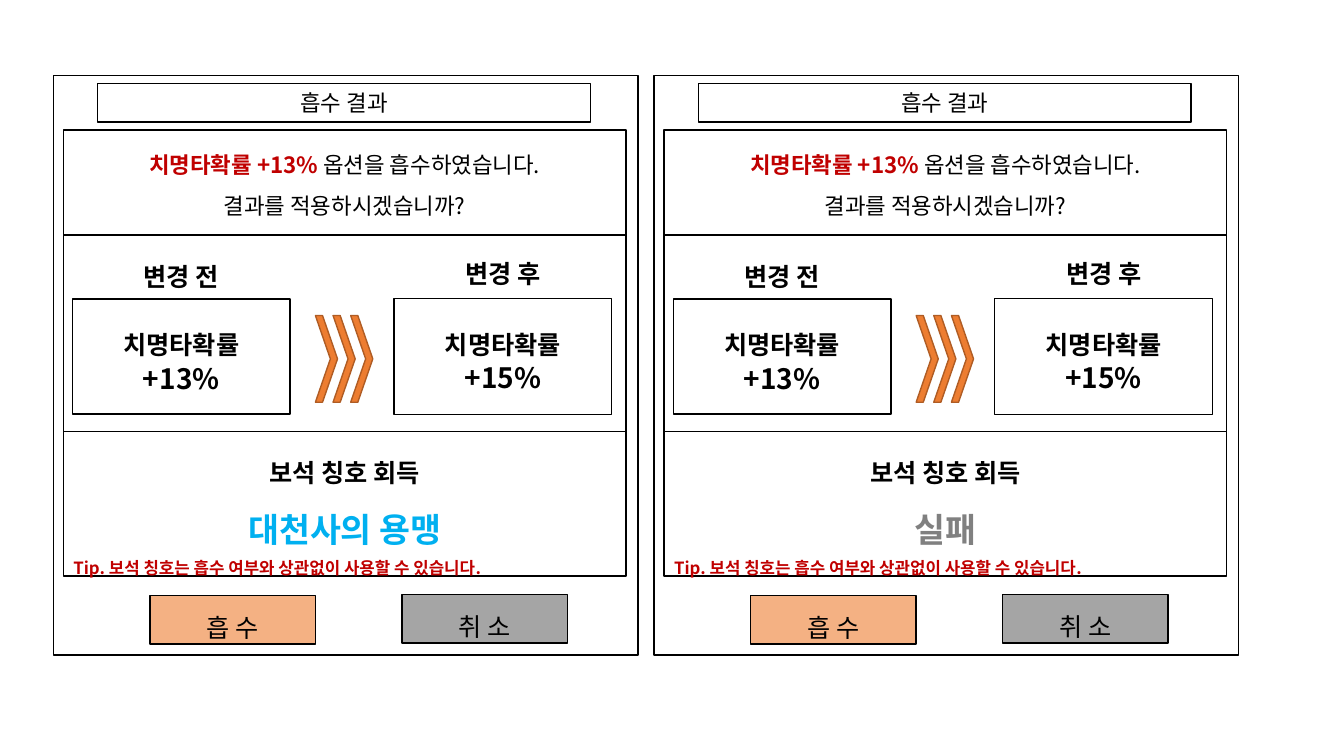
from dataclasses import dataclass

from lxml.etree import SubElement
from pptx import Presentation
from pptx.dml.color import RGBColor
from pptx.enum.shapes import MSO_SHAPE as Preset
from pptx.enum.text import MSO_ANCHOR as Anchor, MSO_AUTO_SIZE as AutoSize, PP_ALIGN as Align
from pptx.oxml.ns import qn
from pptx.util import Pt


@dataclass(frozen=True)
class Theme:
    font: str = "Noto Sans CJK KR"
    black: str = "000000"
    white: str = "FFFFFF"
    red: str = "C00000"
    blue: str = "00B0F0"
    gray: str = "808080"
    orange: str = "ED7D31"
    orange_edge: str = "AF5C24"
    absorb: str = "F4B183"
    cancel: str = "A5A5A5"
    tip: int = 12
    body: int = 16
    heading: int = 18
    value: int = 20
    reward: int = 24


@dataclass(frozen=True)
class Box:
    left: float
    top: float
    width: float
    height: float

    def inner(self, left, top, width, height):
        return Box(self.left + left, self.top + top, width, height)

    def lengths(self):
        return [Pt(round(n, 2)) for n in (self.left, self.top, self.width, self.height)]


THEME = Theme()


def write(frame, lines, size, spacing=1.0, align=Align.CENTER):
    frame.word_wrap = True
    for index, line in enumerate(lines):
        paragraph = frame.paragraphs[0] if index == 0 else frame.add_paragraph()
        paragraph.alignment = align
        paragraph.line_spacing = spacing
        for words, color, bold in line:
            run = paragraph.add_run()
            run.text = words
            run.font.size = Pt(size)
            run.font.bold = bold
            run.font.name = THEME.font
            run.font.color.rgb = RGBColor.from_string(color)
            SubElement(run.font._element, qn("a:ea"), typeface=THEME.font)


def draw(panel, box, fill=THEME.white, edge=THEME.black, preset=Preset.RECTANGLE):
    shape = panel.add_shape(preset, *box.lengths())
    shape.shadow.inherit = False
    if fill:
        shape.fill.solid()
        shape.fill.fore_color.rgb = RGBColor.from_string(fill)
    else:
        shape.fill.background()
    shape.line.color.rgb = RGBColor.from_string(edge)
    shape.line.width = Pt(1)
    return shape


def label(panel, box, lines, size, spacing=1.0, align=Align.CENTER):
    frame = panel.add_textbox(*box.lengths()).text_frame
    write(frame, lines, size, spacing, align)
    frame.auto_size = AutoSize.SHAPE_TO_FIT_TEXT


def bold_label(panel, box, words, size, spacing=1.0, color=THEME.black):
    label(panel, box, [[(words, color, True)]], size, spacing)


def captioned(panel, box, words, size, fill, spacing=1.0):
    frame = draw(panel, box, fill).text_frame
    frame.vertical_anchor = Anchor.MIDDLE
    write(frame, [[(words, THEME.black, False)]], size, spacing)


def message(panel, box):
    draw(panel, box)
    lines = [
        [("치명타확률 +13% ", THEME.red, True), ("옵션을 흡수하였습니다.", THEME.black, False)],
        [("결과를 적용하시겠습니까?", THEME.black, False)],
    ]
    label(panel, box.inner(0, 2.2, box.width, 65.5), lines, THEME.body, 1.5)


def option(panel, box, heading, heading_rise, amount):
    draw(panel, box, fill=None)
    bold_label(panel, box.inner(0, -heading_rise, box.width, 51), heading, THEME.heading, 2)
    bold_label(panel, box.inner(0, -3.3, box.width, 51), "치명타확률", THEME.heading, 2)
    bold_label(panel, box.inner(0, 41, box.width, 31.7), amount, THEME.value)


def comparison(panel, box):
    draw(panel, box)
    option(panel, box.inner(6.5, 45.8, 155.5, 82.1), "변경 전", 52.4, "+13%")
    option(panel, box.inner(236.2, 45.4, 155.5, 82.8), "변경 후", 54, "+15%")
    for step in range(3):
        arrow = draw(panel, box.inner(180 + 12.6 * step, 57.6, 15.8, 61.9),
                     THEME.orange, THEME.orange_edge, Preset.CHEVRON)
        arrow.adjustments[0] = 0.677


def reward(panel, box, outcome, color):
    draw(panel, box)
    bold_label(panel, box.inner(0.5, -7.2, 401, 51), "보석 칭호 회득", THEME.heading, 2)
    bold_label(panel, box.inner(0.5, 23, 401, 65.5), outcome, THEME.reward, 2, color)
    tip = "Tip. 보석 칭호는 흡수 여부와 상관없이 사용할 수 있습니다."
    label(panel, box.inner(0, 79.2, box.width, 29), [[(tip, THEME.red, True)]],
          THEME.tip, 1.5, Align.LEFT)


def result_panel(slide, box, outcome, color):
    panel = slide.shapes.add_group_shape().shapes
    draw(panel, box)
    captioned(panel, box.inner(31.7, 5.8, 352, 27.4), "흡수 결과", THEME.body, THEME.white)
    message(panel, box.inner(7.2, 38.9, 401.8, 74.9))
    comparison(panel, box.inner(7.2, 113.8, 401.8, 140.8))
    reward(panel, box.inner(7.2, 254.4, 401.8, 103), outcome, color)
    captioned(panel, box.inner(69.1, 371.5, 118, 34.6), "흡 수", THEME.heading, THEME.absorb, 1.5)
    captioned(panel, box.inner(249.1, 370.8, 118, 34.6), "취 소", THEME.heading, THEME.cancel, 1.5)


def main():
    deck = Presentation()
    deck.slide_width, deck.slide_height = Pt(960), Pt(540)
    slide = deck.slides.add_slide(deck.slide_layouts[6])
    outcomes = [("대천사의 용맹", THEME.blue), ("실패", THEME.gray)]
    for index, (outcome, color) in enumerate(outcomes):
        result_panel(slide, Box(38.1 + 429.1 * index, 54, 417.6, 414), outcome, color)
    deck.save("out.pptx")


if __name__ == "__main__":
    main()
